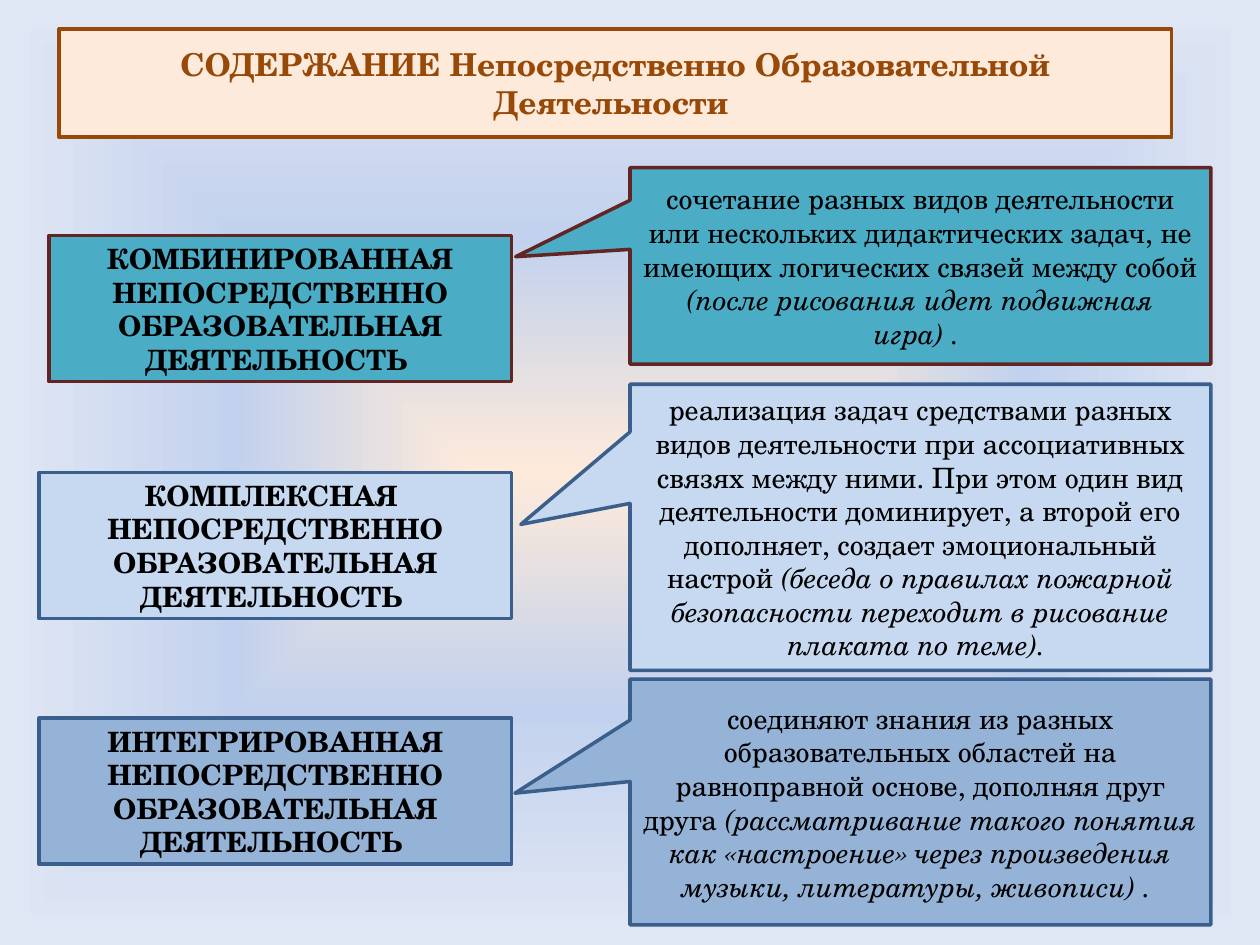
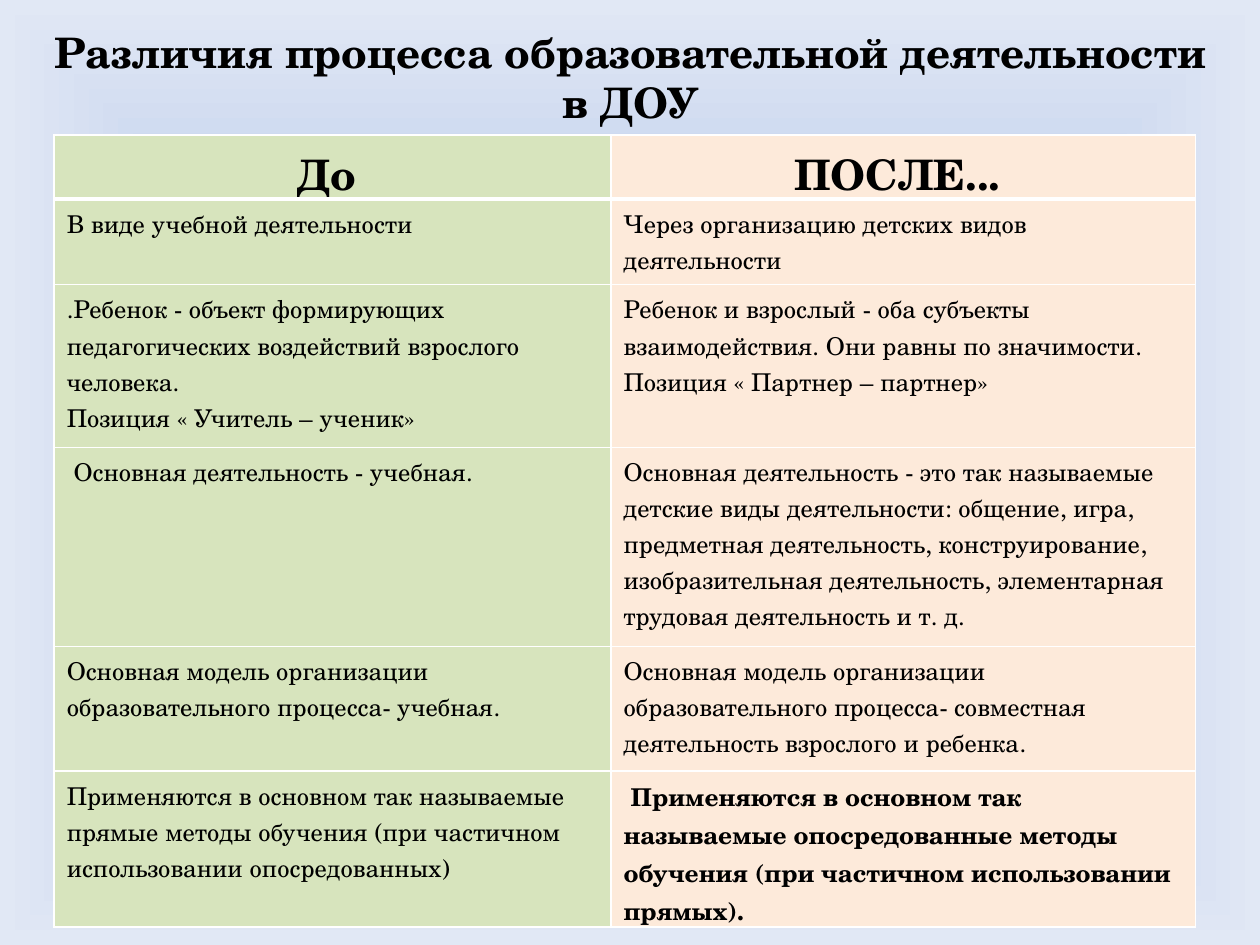
from lxml import etree
from pptx import Presentation
from pptx.dml.color import RGBColor
from pptx.enum.shapes import MSO_SHAPE
from pptx.enum.text import MSO_ANCHOR, PP_ALIGN
from pptx.oxml import parse_xml
from pptx.oxml.ns import nsdecls, qn
from pptx.util import Inches, Pt

FONT = "TeX Gyre Schola"
COLORS = {
    "text": "000000",
    "cream": "FDEADA",
    "brown": "984807",
    "teal": "4BACC6",
    "maroon": "632523",
    "pale_blue": "C6D9F1",
    "mid_blue": "95B3D7",
    "navy": "3A5F8C",
    "green": "D7E4BD",
    "white": "FFFFFF",
}
BACKGROUND_STOPS = {0: "FDEADA", 50: "C2D1ED", 100: "E1E8F5"}

ACTIVITIES = [
    {
        "name": ["КОМБИНИРОВАННАЯ НЕПОСРЕДСТВЕННО ОБРАЗОВАТЕЛЬНАЯ ДЕЯТЕЛЬНОСТЬ "],
        "meaning": "сочетание разных видов деятельности или нескольких дидактических "
                   "задач, не имеющих логических связей между собой ",
        "example": "(после рисования идет подвижная игра) . ",
        "name_box": (0.39, 1.87, 3.67, 1.16),
        "meaning_box": (5, 1.33, 4.61, 1.56),
        "pointer": (-0.697, -0.046),
        "colors": ("teal", "maroon"),
    },
    {
        "name": ["КОМПЛЕКСНАЯ ", "НЕПОСРЕДСТВЕННО ОБРАЗОВАТЕЛЬНАЯ ДЕЯТЕЛЬНОСТЬ "],
        "meaning": "реализация задач средствами разных видов деятельности при "
                   "ассоциативных связях между ними. При этом один вид деятельности "
                   "доминирует, а второй его дополняет, создает эмоциональный настрой ",
        "example": "(беседа о правилах пожарной безопасности переходит в рисование "
                   "плаката по теме). ",
        "name_box": (0.31, 3.75, 3.75, 1.16),
        "meaning_box": (5, 3.05, 4.61, 2.27),
        "pointer": (-0.688, -0.01),
        "colors": ("pale_blue", "navy"),
    },
    {
        "name": ["ИНТЕГРИРОВАННАЯ НЕПОСРЕДСТВЕННО ОБРАЗОВАТЕЛЬНАЯ ДЕЯТЕЛЬНОСТЬ "],
        "meaning": "соединяют знания из разных образовательных областей на "
                   "равноправной основе, дополняя друг друга ",
        "example": "(рассматривание такого понятия как «настроение» через "
                   "произведения музыки, литературы, живописи) . ",
        "name_box": (0.31, 5.7, 3.75, 1.16),
        "meaning_box": (5, 5.39, 4.61, 1.95),
        "pointer": (-0.698, -0.036),
        "colors": ("mid_blue", "navy"),
    },
]

COMPARISON = [
    (["До "], ["ПОСЛЕ... "]),
    (["В виде учебной деятельности"],
     ["Через организацию детских видов деятельности"]),
    ([".Ребенок - объект формирующих педагогических воздействий взрослого человека.",
      "Позиция « Учитель – ученик»"],
     ["Ребенок и взрослый - оба субъекты взаимодействия. Они равны по значимости. "
      "Позиция « Партнер – партнер»"]),
    ([" Основная деятельность - учебная."],
     ["Основная деятельность - это так называемые детские виды деятельности: общение, "
      "игра, предметная деятельность, конструирование, изобразительная деятельность, "
      "элементарная трудовая деятельность и т. д."]),
    (["Основная модель организации образовательного процесса- учебная."],
     ["Основная модель организации образовательного процесса- совместная деятельность "
      "взрослого и ребенка."]),
    (["Применяются в основном так называемые прямые методы обучения "
      "(при частичном использовании опосредованных)"],
     [" Применяются в основном так называемые опосредованные методы обучения "
      "(при частичном использовании прямых)."]),
]
COLUMN_WIDTHS = [4.42, 4.64]
ROW_HEIGHTS = [0.51, 0.68, 1.29, 1.58, 0.99, 1.24]


def rgb(color):
    """Return the named colour."""
    return RGBColor.from_string(COLORS[color])


def add_slide(deck):
    """Add a blank slide with the shared gradient background."""
    slide = deck.slides.add_slide(deck.slide_layouts[6])
    stops = "".join(f'<a:gs pos="{position * 1000}"><a:srgbClr val="{color}"/></a:gs>'
                    for position, color in BACKGROUND_STOPS.items())
    background = parse_xml(
        f'<p:bg {nsdecls("p", "a")}><p:bgPr><a:gradFill rotWithShape="1">'
        f'<a:gsLst>{stops}</a:gsLst><a:path path="shape">'
        '<a:fillToRect l="50000" t="50000" r="50000" b="50000"/></a:path>'
        '</a:gradFill><a:effectLst/></p:bgPr></p:bg>')
    slide.element.cSld.insert(0, background)
    return slide


def style(paragraph, size, color="text", bold=False, align=PP_ALIGN.CENTER):
    """Set the alignment and font of a paragraph."""
    paragraph.alignment = align
    font = paragraph.font
    font.name, font.size, font.bold = FONT, Pt(size), bold
    font.color.rgb = rgb(color)


def write(frame, lines, size, **look):
    """Fill a text frame with one styled paragraph per line."""
    frame.word_wrap = True
    frame.text = "\n".join(lines)
    for paragraph in frame.paragraphs:
        style(paragraph, size, **look)


def add_panel(slide, box, fill, outline, preset=MSO_SHAPE.RECTANGLE):
    """Add a filled, outlined shape and return it."""
    panel = slide.shapes.add_shape(preset, *map(Inches, box))
    panel.shadow.inherit = False
    panel.fill.solid()
    panel.fill.fore_color.rgb = rgb(fill)
    panel.line.color.rgb = rgb(outline)
    panel.line.width = Pt(2)
    panel.text_frame.word_wrap = True
    panel.text_frame.vertical_anchor = MSO_ANCHOR.MIDDLE
    return panel


def add_callout(slide, activity):
    """Add the callout that explains an activity and gives an example."""
    callout = add_panel(slide, activity["meaning_box"], *activity["colors"],
                        preset=MSO_SHAPE.RECTANGULAR_CALLOUT)
    for index, offset in enumerate(activity["pointer"]):
        callout.adjustments[index] = offset
    paragraph = callout.text_frame.paragraphs[0]
    style(paragraph, 16)
    paragraph.add_run().text = activity["meaning"]
    example = paragraph.add_run()
    example.text = activity["example"]
    example.font.italic = True


def set_borders(cell, widths):
    """Draw white cell borders of the given widths, keyed by side."""
    properties = cell._tc.get_or_add_tcPr()
    for index, side in enumerate("LRTB"):
        line = etree.Element(qn(f"a:ln{side}"), w=str(Pt(widths.get(side, 1))))
        fill = etree.SubElement(line, qn("a:solidFill"))
        etree.SubElement(fill, qn("a:srgbClr"), val=COLORS["white"])
        properties.insert(index, line)


def add_comparison(slide):
    """Add the before and after table."""
    table = slide.shapes.add_table(
        len(ROW_HEIGHTS), len(COLUMN_WIDTHS), Inches(0.43), Inches(1.07),
        Inches(sum(COLUMN_WIDTHS)), Inches(sum(ROW_HEIGHTS))).table
    for column, width in zip(table.columns, COLUMN_WIDTHS):
        column.width = Inches(width)
    for row_index, (row, height) in enumerate(zip(table.rows, ROW_HEIGHTS)):
        row.height = Inches(height)
        header = row_index == 0
        for column_index, cell in enumerate(row.cells):
            conclusion = row_index == len(ROW_HEIGHTS) - 1 and column_index == 1
            cell.fill.solid()
            cell.fill.fore_color.rgb = rgb(("green", "cream")[column_index])
            cell.margin_bottom = 0
            set_borders(cell, {"B": 3} if header else {"T": 3} if row_index == 1 else {})
            write(cell.text_frame, COMPARISON[row_index][column_index],
                  24 if header else 14, bold=header or conclusion,
                  align=PP_ALIGN.CENTER if header else PP_ALIGN.LEFT)


def build_content_slide(deck):
    """Build the slide on the three kinds of activity."""
    slide = add_slide(deck)
    heading = add_panel(slide, (0.47, 0.23, 8.83, 0.86), "cream", "brown")
    write(heading.text_frame,
          ["СОДЕРЖАНИЕ Непосредственно Образовательной Деятельности "],
          18, color="brown", bold=True)
    for activity in ACTIVITIES:
        name = add_panel(slide, activity["name_box"], *activity["colors"])
        write(name.text_frame, activity["name"], 16, bold=True)
    for activity in ACTIVITIES:
        add_callout(slide, activity)


def build_differences_slide(deck):
    """Build the slide that compares the process before and after."""
    slide = add_slide(deck)
    heading = slide.shapes.add_textbox(*map(Inches, (0.28, 0.16, 9.45, 0.91)))
    write(heading.text_frame, ["Различия процесса образовательной деятельности в ДОУ"],
          24, bold=True)
    add_comparison(slide)


def main():
    """Build and save the presentation."""
    deck = Presentation()
    deck.slide_width, deck.slide_height = Inches(10), Inches(7.5)
    build_content_slide(deck)
    build_differences_slide(deck)
    deck.save("out.pptx")


if __name__ == "__main__":
    main()
